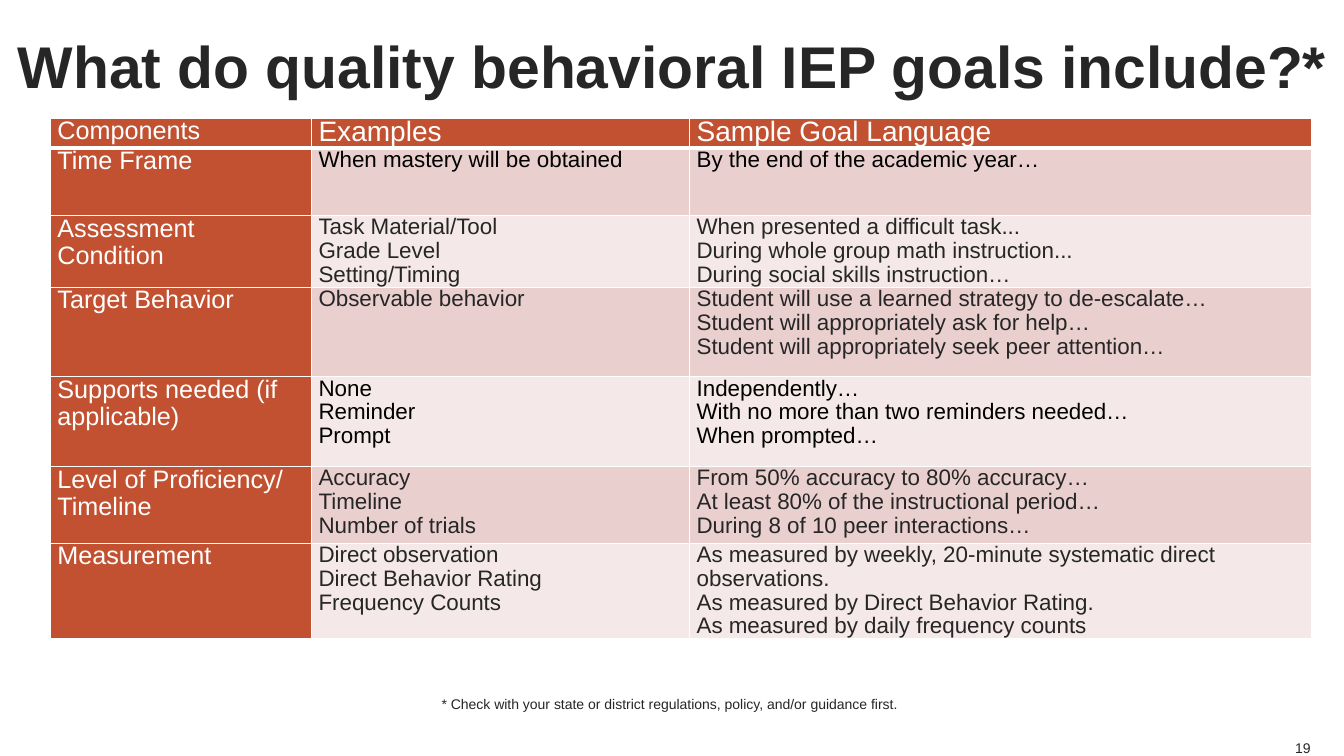
from dataclasses import dataclass

from lxml import etree
from pptx import Presentation
from pptx.dml.color import RGBColor
from pptx.enum.text import MSO_ANCHOR, PP_ALIGN
from pptx.oxml.ns import qn
from pptx.slide import Slide
from pptx.table import _Cell
from pptx.text.text import TextFrame
from pptx.util import Inches, Pt

WHITE = RGBColor(0xFF, 0xFF, 0xFF)
BLACK = RGBColor(0x00, 0x00, 0x00)
INK = RGBColor(0x26, 0x26, 0x26)
RUST = RGBColor(0xC2, 0x51, 0x31)
DARK_BAND = RGBColor(0xE9, 0xD0, 0xCE)
LIGHT_BAND = RGBColor(0xF4, 0xE9, 0xE8)

COLUMN_WIDTHS = (2.59, 3.75, 6.17)
HEADER_HEIGHT = 0.25
HEADINGS = (("Components", 18), ("Examples", 20), ("Sample Goal Language", 20))
TABLE_SPACING = 0.96


@dataclass(frozen=True)
class GoalComponent:
    name: str
    examples: str
    sample_language: str
    height: float
    color: RGBColor = INK


@dataclass(frozen=True)
class Caption:
    text: str
    left: float
    top: float
    width: float
    height: float
    size: int
    align: PP_ALIGN
    anchor: MSO_ANCHOR
    bold: bool = False
    spacing: float = 1.0
    wrap: bool = True


COMPONENTS = (
    GoalComponent("Time Frame", "When mastery will be obtained",
                  "By the end of the academic year…", 0.67, BLACK),
    GoalComponent("Assessment Condition",
                  "Task Material/Tool\nGrade Level\nSetting/Timing",
                  "When presented a difficult task...\n"
                  "During whole group math instruction...\n"
                  "During social skills instruction…", 0.67),
    GoalComponent("Target Behavior", "Observable behavior",
                  "Student will use a learned strategy to de-escalate…\n"
                  "Student will appropriately ask for help…\n"
                  "Student will appropriately seek peer attention…", 0.89),
    GoalComponent("Supports needed (if applicable)", "None\nReminder\nPrompt",
                  "Independently…\n"
                  "With no more than two reminders needed…\n"
                  "When prompted…", 0.89, BLACK),
    GoalComponent("Level of Proficiency/ Timeline",
                  "Accuracy\nTimeline\nNumber of trials",
                  "From 50% accuracy to 80% accuracy…\n"
                  "At least 80% of the instructional period…\n"
                  "During 8 of 10 peer interactions…", 0.76),
    GoalComponent("Measurement",
                  "Direct observation\nDirect Behavior Rating\nFrequency Counts",
                  "As measured by weekly, 20-minute systematic direct observations.\n"
                  "As measured by Direct Behavior Rating.\n"
                  "As measured by daily frequency counts", 0.89),
)

CAPTIONS = (
    Caption("What do quality behavioral IEP goals include?*", 0.13, -0.06, 13.08, 1.4,
            42, PP_ALIGN.CENTER, MSO_ANCHOR.MIDDLE, bold=True),
    Caption("* Check with your state or district regulations, policy, and/or guidance first.",
            4.38, 6.87, 4.73, 0.2, 10, PP_ALIGN.LEFT, MSO_ANCHOR.BOTTOM, spacing=1.25),
    Caption("19", 12.83, 7.33, 0.17, 0.17, 10, PP_ALIGN.RIGHT, MSO_ANCHOR.BOTTOM,
            wrap=False),
)


def write(frame: TextFrame, text: str, size: int, color: RGBColor, spacing: float,
          align: PP_ALIGN = PP_ALIGN.LEFT, bold: bool = False) -> None:
    """Fill the frame with one paragraph for each line of text."""
    frame.text = text
    font_format = {"name": "Arial", "size": Pt(size), "bold": bold}
    for paragraph in frame.paragraphs:
        paragraph.alignment = align
        paragraph.line_spacing = spacing
        for run in paragraph.runs:
            for attribute, value in font_format.items():
                setattr(run.font, attribute, value)
            run.font.color.rgb = color


def add_caption(slide: Slide, caption: Caption) -> None:
    box = slide.shapes.add_textbox(Inches(caption.left), Inches(caption.top),
                                   Inches(caption.width), Inches(caption.height))
    frame_format = {"margin_left": 0, "margin_right": 0, "margin_top": 0,
                    "margin_bottom": 0, "word_wrap": caption.wrap,
                    "vertical_anchor": caption.anchor}
    for attribute, value in frame_format.items():
        setattr(box.text_frame, attribute, value)
    write(box.text_frame, caption.text, caption.size, INK, caption.spacing,
          caption.align, caption.bold)


def add_borders(cell: _Cell, bottom_width: int) -> None:
    properties = cell._tc.get_or_add_tcPr()
    for side, width in {"L": 1, "R": 1, "T": 1, "B": bottom_width}.items():
        line = etree.SubElement(properties, qn(f"a:ln{side}"), w=str(Pt(width)))
        fill = etree.SubElement(line, qn("a:solidFill"))
        etree.SubElement(fill, qn("a:srgbClr"), val=str(WHITE))


def fill_cell(cell: _Cell, text: str, size: int, color: RGBColor, fill: RGBColor,
              bottom_width: int = 1) -> None:
    cell_format = {"margin_left": Inches(0.07), "margin_right": Inches(0.07),
                   "margin_top": 0, "margin_bottom": 0}
    for attribute, value in cell_format.items():
        setattr(cell, attribute, value)
    add_borders(cell, bottom_width)
    cell.fill.solid()
    cell.fill.fore_color.rgb = fill
    write(cell.text_frame, text, size, color, TABLE_SPACING)


def add_goal_table(slide: Slide) -> None:
    heights = [HEADER_HEIGHT] + [component.height for component in COMPONENTS]
    table = slide.shapes.add_table(len(heights), len(COLUMN_WIDTHS), Inches(0.5),
                                   Inches(1.17), Inches(sum(COLUMN_WIDTHS)),
                                   Inches(5.45)).table
    for column, width in zip(table.columns, COLUMN_WIDTHS):
        column.width = Inches(width)
    for row, height in zip(table.rows, heights):
        row.height = Inches(height)

    for index, (heading, size) in enumerate(HEADINGS):
        fill_cell(table.cell(0, index), heading, size, WHITE, RUST, bottom_width=3)
    for index, component in enumerate(COMPONENTS, start=1):
        band = DARK_BAND if index % 2 else LIGHT_BAND
        fill_cell(table.cell(index, 0), component.name, 18, WHITE, RUST)
        fill_cell(table.cell(index, 1), component.examples, 16, component.color, band)
        fill_cell(table.cell(index, 2), component.sample_language, 16,
                  component.color, band)


def main() -> None:
    presentation = Presentation()
    presentation.slide_width = Inches(13.33)
    presentation.slide_height = Inches(7.5)
    slide = presentation.slides.add_slide(presentation.slide_layouts[6])
    add_goal_table(slide)
    for caption in CAPTIONS:
        add_caption(slide, caption)
    presentation.save("out.pptx")


if __name__ == "__main__":
    main()
